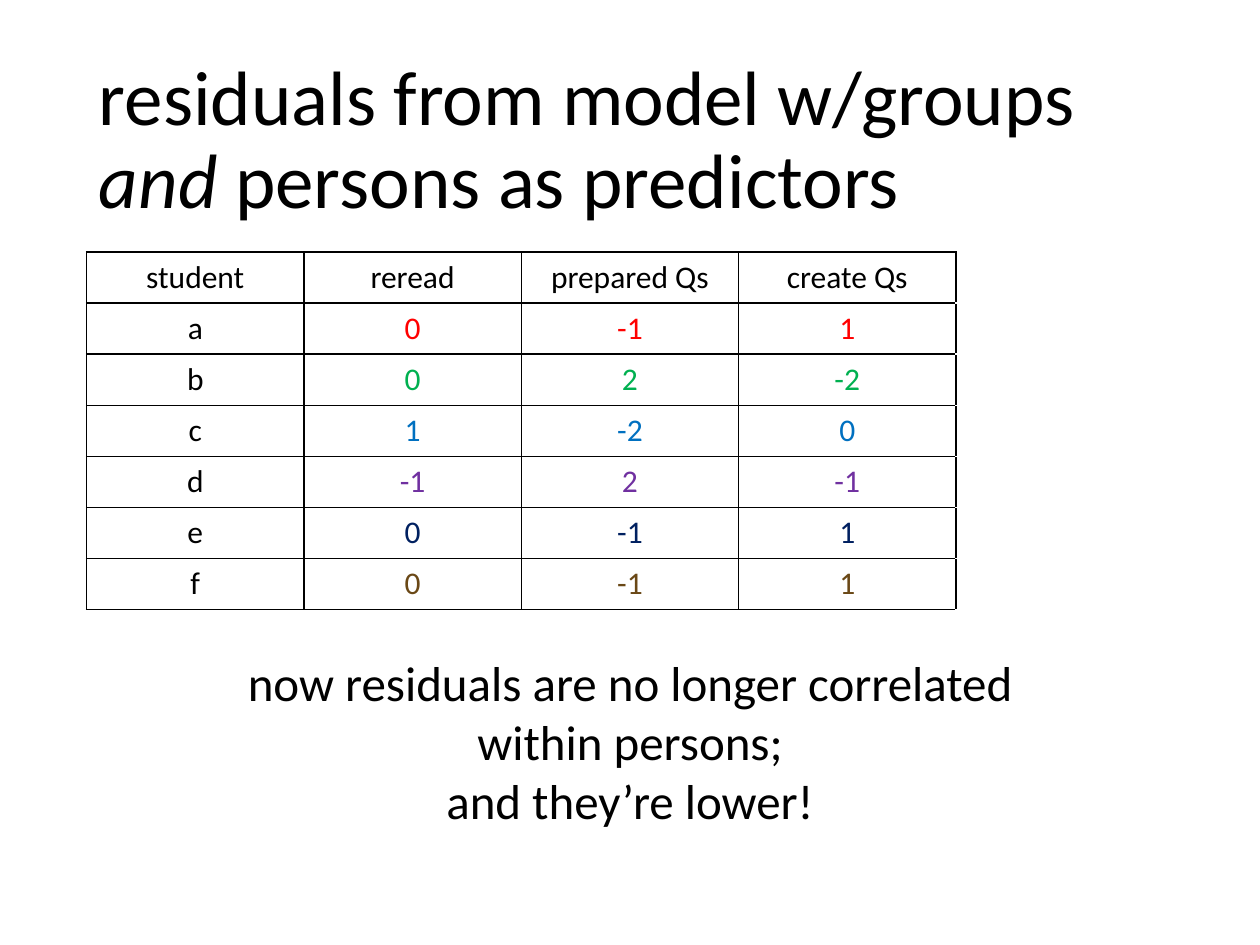
import pptx
import pptx.dml.color
import pptx.enum.text
import pptx.util
import lxml.etree
import pptx.oxml.ns

Pt = pptx.util.Pt
CENTER = pptx.enum.text.PP_ALIGN.CENTER
MIDDLE = pptx.enum.text.MSO_ANCHOR.MIDDLE


def format_run(run, size, color="000000"):
    run.font.name = "Calibri"
    run.font.size = Pt(size)
    run.font.color.rgb = pptx.dml.color.RGBColor.from_string(color)


def add_borders(cell, sides):
    """Draw 1 pt black lines; they must come before the fill in tcPr."""
    properties = cell._tc.get_or_add_tcPr()
    for position, side in enumerate(sides):
        line = lxml.etree.Element(pptx.oxml.ns.qn(f"a:ln{side}"), w=str(Pt(1)))
        fill = lxml.etree.SubElement(line, pptx.oxml.ns.qn("a:solidFill"))
        lxml.etree.SubElement(fill, pptx.oxml.ns.qn("a:srgbClr"), val="000000")
        properties.insert(position, line)


presentation = pptx.Presentation()
presentation.slide_width = Pt(720)
presentation.slide_height = Pt(540)
slide = presentation.slides.add_slide(presentation.slide_layouts[6])

# Title
title = slide.shapes.add_textbox(Pt(49.5), Pt(28.75), Pt(621), Pt(104.4))
title.text_frame.word_wrap = True
title.text_frame.vertical_anchor = MIDDLE
paragraph = title.text_frame.paragraphs[0]
paragraph.line_spacing = 0.9
for text in ["residuals from model w/groups ", "and", " persons as predictors"]:
    run = paragraph.add_run()
    run.text = text
    run.font.italic = text == "and"
    format_run(run, 44)

# Table of residuals: one value colour per student, last column left open
rows = [
    ("000000", ["student", "reread", "prepared Qs", "create Qs"]),
    ("FF0000", ["a", "0", "-1", "1"]),
    ("00B050", ["b", "0", "2", "-2"]),
    ("0070C0", ["c", "1", "-2", "0"]),
    ("7030A0", ["d", "-1", "2", "-1"]),
    ("002060", ["e", "0", "-1", "1"]),
    ("6A4816", ["f", "0", "-1", "1"]),
]
column_count = 5
row_height = 29.2
table = slide.shapes.add_table(
    len(rows), column_count, Pt(49.5), Pt(144), Pt(621), Pt(row_height * len(rows))
).table
table.first_row = False
table.horz_banding = False
for column in table.columns:
    column.width = Pt(621 / column_count)
for row_index, (value_color, texts) in enumerate(rows):
    table.rows[row_index].height = Pt(row_height)
    for column_index in range(column_count):
        cell = table.cell(row_index, column_index)
        cell.fill.background()
        if column_index == len(texts):
            add_borders(cell, "L")
            continue
        add_borders(cell, "LRTB")
        cell.text_frame.text = texts[column_index]
        paragraph = cell.text_frame.paragraphs[0]
        paragraph.alignment = CENTER
        format_run(paragraph.runs[0], 18, value_color if column_index else "000000")

# Conclusion
conclusion = slide.shapes.add_textbox(Pt(132), Pt(369.4), Pt(456), Pt(108.7))
text_frame = conclusion.text_frame
text_frame.word_wrap = False
text_frame.auto_size = pptx.enum.text.MSO_AUTO_SIZE.SHAPE_TO_FIT_TEXT
text_frame.text = (
    "now residuals are no longer correlated\nwithin persons;\nand they’re lower!"
)
for paragraph in text_frame.paragraphs:
    paragraph.alignment = CENTER
    format_run(paragraph.runs[0], 28)

presentation.save("out.pptx")
